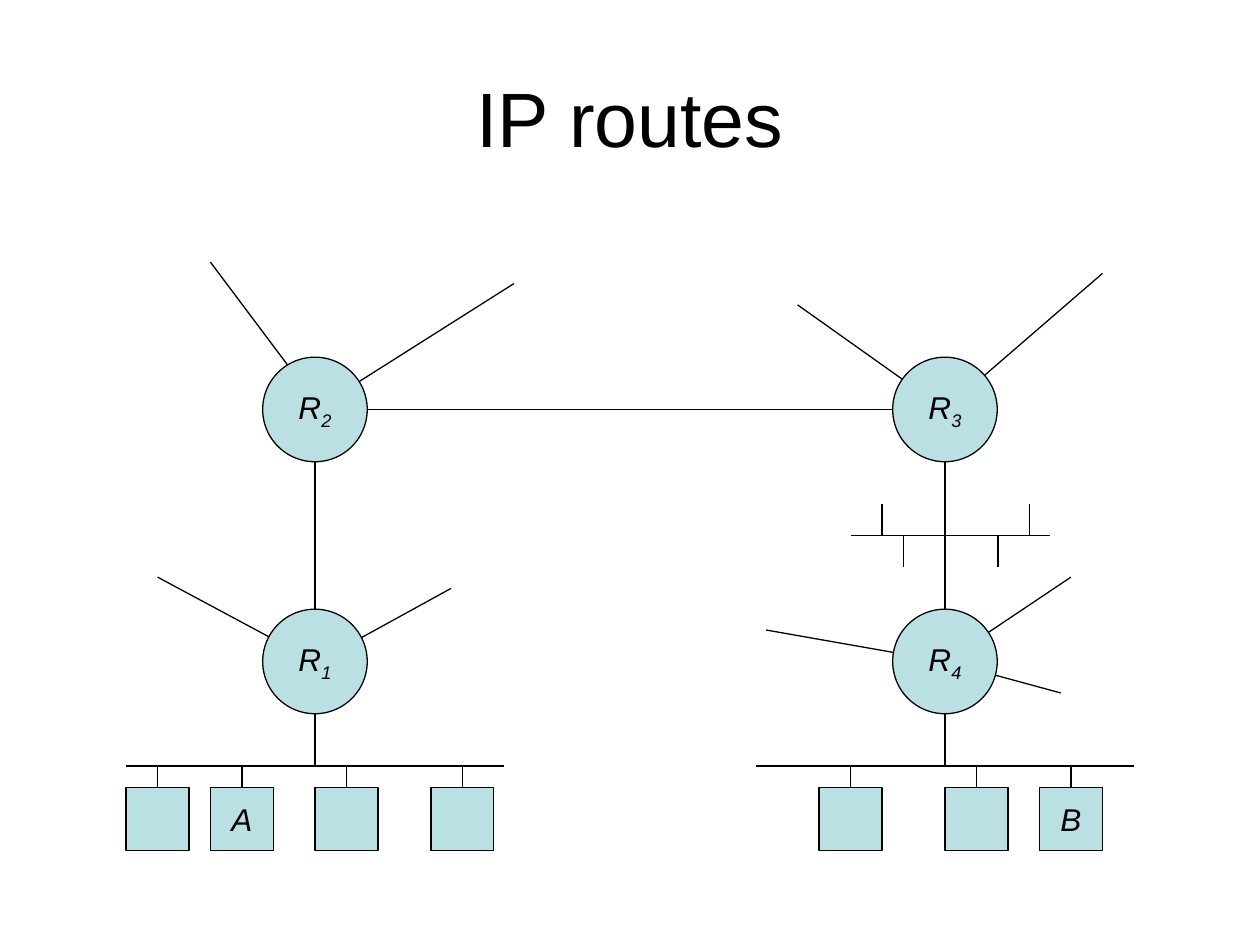
import pptx
import pptx.dml.color
import pptx.enum.shapes
import pptx.enum.text
import pptx.oxml.ns
import pptx.util
from dataclasses import dataclass
from lxml import etree

Inches = pptx.util.Inches
Shape = pptx.enum.shapes.MSO_SHAPE


@dataclass(frozen=True)
class Theme:
    font: str = "Arial"
    ink: str = "000000"
    fill: str = "BBE0E3"
    title_size: int = 44
    label_size: int = 18
    line_width: float = 0.75


THEME = Theme()
ROUTER_SIZE = 0.83
HOST_SIZE = 0.5
HOST_TOP = 6.25
LAN_Y = 6.08
BUS_Y = 4.25

# Router number: centre
ROUTERS = {1: (2.5, 5.25), 2: (2.5, 3.25), 3: (7.5, 3.25), 4: (7.5, 5.25)}

# Outer end and inner end of each open link
SPOKES = [
    ((1.67, 2.08), (2.42, 3.08)),
    ((4.08, 2.25), ROUTERS[2]),
    ((1.25, 4.58), ROUTERS[1]),
    ((3.58, 4.67), (2.67, 5.17)),
    ((6.33, 2.42), ROUTERS[3]),
    ((8.75, 2.17), ROUTERS[3]),
    ((6.08, 5), ROUTERS[4]),
    ((8.5, 4.58), ROUTERS[4]),
    ((8.42, 5.5), ROUTERS[4]),
]

# Left end and right end of each local network, with its hosts (left, name)
NETWORKS = [
    (1, 4, [(1, ""), (1.67, "A"), (2.5, ""), (3.42, "")]),
    (6, 9, [(6.5, ""), (7.5, ""), (8.25, "B")]),
]


def color(value):
    return pptx.dml.color.RGBColor.from_string(value)


def style_text(box, size, italic=False):
    frame = box.text_frame
    frame.vertical_anchor = pptx.enum.text.MSO_ANCHOR.MIDDLE
    para = frame.paragraphs[0]
    para.alignment = pptx.enum.text.PP_ALIGN.CENTER
    for span in para.runs:
        span.font.name = THEME.font
        span.font.size = pptx.util.Pt(size)
        span.font.italic = italic
        span.font.color.rgb = color(THEME.ink)


def style_line(shape):
    shape.line.color.rgb = color(THEME.ink)
    shape.line.width = pptx.util.Pt(THEME.line_width)


def add_title(page, text):
    box = page.shapes.add_textbox(Inches(0.5), Inches(0.3), Inches(9), Inches(1.25))
    box.text_frame.word_wrap = True
    box.text_frame.text = text
    style_text(box, THEME.title_size)


def add_link(page, start, end):
    link = page.shapes.add_connector(
        pptx.enum.shapes.MSO_CONNECTOR.STRAIGHT,
        *(Inches(value) for value in (*start, *end)))
    style_line(link)
    properties = link._element.spPr
    etree.SubElement(properties, pptx.oxml.ns.qn("a:effectLst"))
    return link


def add_node(page, kind, left, top, size, label):
    node = page.shapes.add_shape(
        kind, Inches(left), Inches(top), Inches(size), Inches(size))
    node.shadow.inherit = False
    node.fill.solid()
    node.fill.fore_color.rgb = color(THEME.fill)
    style_line(node)
    node.text_frame.word_wrap = False
    node.text_frame.text = label
    style_text(node, THEME.label_size, italic=True)
    return node


def add_router(page, number, center):
    left, top = (value - ROUTER_SIZE / 2 for value in center)
    node = add_node(page, Shape.OVAL, left, top, ROUTER_SIZE, "R")
    para = node.text_frame.paragraphs[0]
    para.add_run().text = str(number)
    style_text(node, THEME.label_size, italic=True)
    para.runs[1].font._element.set("baseline", "-25000")


def add_network(page, left, right, hosts):
    add_link(page, (left, LAN_Y), (right, LAN_Y))
    for host_left, name in hosts:
        host = add_node(page, Shape.RECTANGLE, host_left, HOST_TOP, HOST_SIZE, name)
        middle = host_left + HOST_SIZE / 2
        stub = add_link(page, (middle, LAN_Y), (middle, HOST_TOP))
        stub.end_connect(host, 0)


def add_bus(page):
    add_link(page, (6.75, BUS_Y), (8.33, BUS_Y))
    for x, rise in ((7, -0.25), (7.17, 0.25), (7.92, 0.25), (8.17, -0.25)):
        add_link(page, (x, BUS_Y), (x, BUS_Y + rise))


def main():
    deck = pptx.Presentation()
    deck.slide_width, deck.slide_height = Inches(10), Inches(7.5)
    page = deck.slides.add_slide(deck.slide_layouts[6])
    add_title(page, "IP routes")

    # Links between routers and down to the local networks
    for start, end in ((2, 3), (2, 1), (3, 4)):
        add_link(page, ROUTERS[start], ROUTERS[end])
    for number in (1, 4):
        x, y = ROUTERS[number]
        add_link(page, (x, y), (x, LAN_Y))

    # Open links and the shared bus
    for outer, inner in SPOKES:
        add_link(page, outer, inner)
    add_bus(page)

    # Local networks with hosts
    for left, right, hosts in NETWORKS:
        add_network(page, left, right, hosts)

    # Routers cover the inner ends of the links
    for number, center in ROUTERS.items():
        add_router(page, number, center)

    deck.save("out.pptx")


if __name__ == "__main__":
    main()
